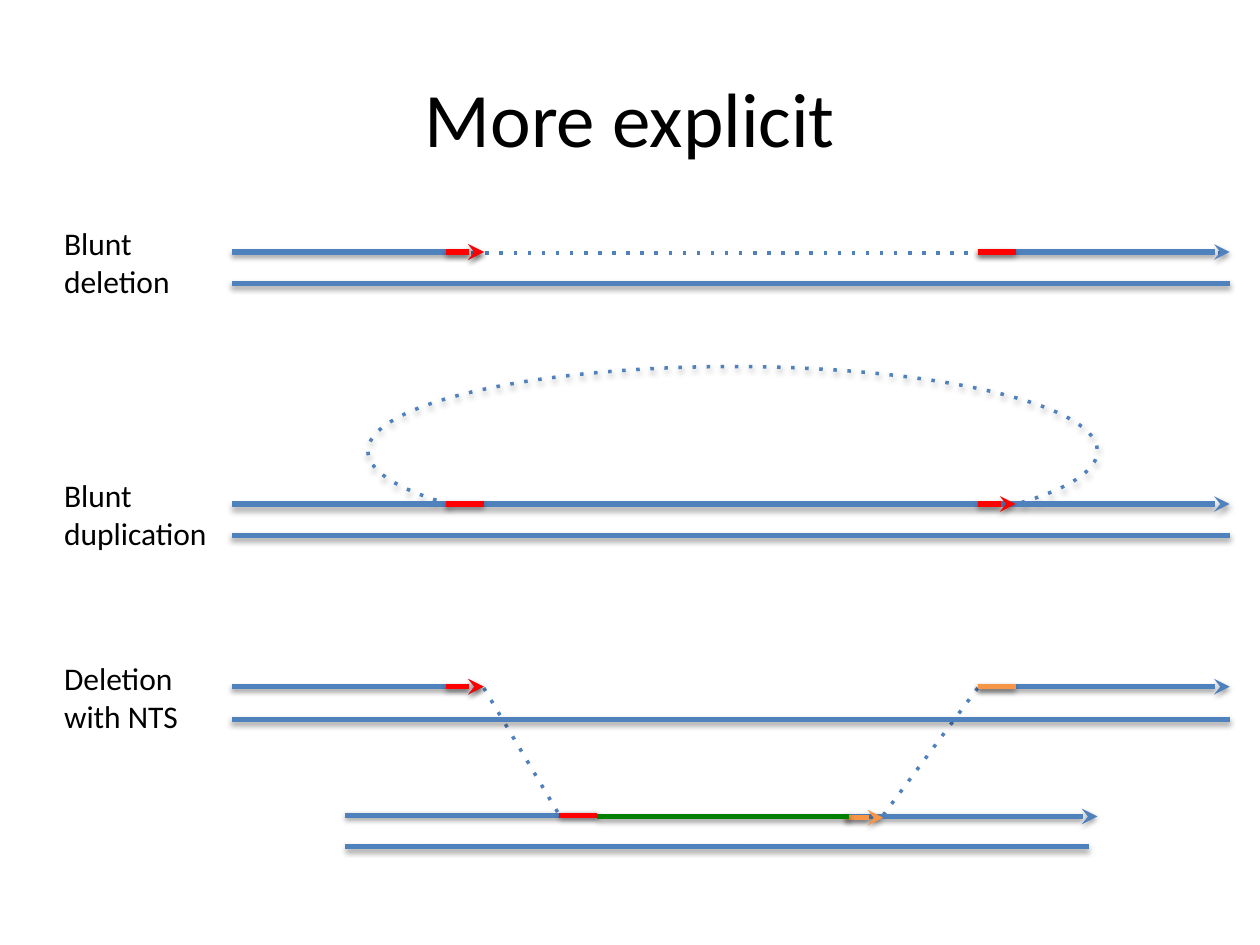
"""Build the slide that compares blunt deletion, blunt duplication and deletion with NTS."""
import lxml.etree
import pptx
import pptx.dml.color
import pptx.enum.shapes
import pptx.enum.text
import pptx.oxml.ns
import pptx.util

Inches = pptx.util.Inches
Pt = pptx.util.Pt
qn = pptx.oxml.ns.qn
add = lxml.etree.SubElement
HUES = {"blue": "4F81BD", "red": "FF0000", "orange": "F79646", "green": "008000", "black": "000000"}

deck = pptx.Presentation()
deck.slide_width, deck.slide_height = Inches(10), Inches(7.5)
slide = deck.slides.add_slide(deck.slide_layouts[6])


def style(shape, hue, dots=False, arrow=False, shade=True):
    """Set the line, dots, arrowhead and shadow of a shape."""
    shape.line.color.rgb = pptx.dml.color.RGBColor.from_string(HUES[hue])
    shape.line.width = Pt(2 if dots else 3)
    props = shape.element.find(qn("p:spPr"))
    line = props.find(qn("a:ln"))
    if dots:
        add(line, qn("a:prstDash"), val="dot")
    if arrow:
        add(line, qn("a:tailEnd"), type="stealth")
    effects = add(props, qn("a:effectLst"))
    if shade:
        cast = add(effects, qn("a:outerShdw"), blurRad=str(Pt(3.1)), dist=str(Pt(1.6)),
                   dir="5400000", rotWithShape="0")
        tint = add(cast, qn("a:srgbClr"), val=HUES["black"])
        add(tint, qn("a:alpha"), val="38000")


def write(box, lines, size, align, wrap):
    """Put lines of text at left, top, width and height."""
    shape = slide.shapes.add_textbox(*map(Inches, box))
    frame = shape.text_frame
    frame.word_wrap = wrap
    if wrap:
        frame.vertical_anchor = pptx.enum.text.MSO_ANCHOR.MIDDLE
    else:
        frame.auto_size = pptx.enum.text.MSO_AUTO_SIZE.SHAPE_TO_FIT_TEXT
    for i, words in enumerate(lines):
        para = frame.add_paragraph() if i else frame.paragraphs[0]
        para.alignment = align
        run = para.add_run()
        run.text = words
        run.font.name, run.font.size = "Calibri", Pt(size)
        run.font.color.rgb = pptx.dml.color.RGBColor.from_string(HUES["black"])


loop = slide.shapes.add_shape(pptx.enum.shapes.MSO_SHAPE.ARC, *map(Inches, (2.92, 2.91, 5.79, 1.34)))
loop.adjustments[0], loop.adjustments[1] = 101.586, 6.198
loop.fill.background()
style(loop, "blue", dots=True)

ALIGN = pptx.enum.text.PP_ALIGN
write((0.5, 0.3, 9, 1.25), ["More explicit"], 44, ALIGN.CENTER, True)
labels = [
    (1.73, 1.05, ["Blunt", "deletion"]),
    (3.73, 1.35, ["Blunt", "duplication"]),
    (5.18, 1.12, ["Deletion", "with NTS"]),
]
for top, width, lines in labels:
    write((0.41, top, width, 0.71), lines, 18, ALIGN.LEFT, False)

links = [(1.84, 2.01, 9.76, 2.01), (7.01, 6.47, 7.76, 5.46), (3.84, 5.46, 4.44, 6.47)]
strands = [
    (1.84, 9.76, 2.25, "blue", False),
    (1.84, 3.84, 2, "blue", True),
    (7.76, 9.76, 2, "blue", True),
    (3.54, 3.84, 2, "red", True),
    (7.76, 8.06, 2, "red", False),
    (1.84, 9.76, 4.25, "blue", False),
    (1.84, 9.76, 4, "blue", True),
    (7.76, 8.06, 4, "red", True),
    (3.54, 3.84, 4, "red", False),
    (1.84, 9.76, 5.71, "blue", False),
    (1.84, 3.84, 5.45, "blue", True),
    (7.76, 9.76, 5.45, "blue", True),
    (3.54, 3.84, 5.45, "red", True),
    (7.76, 8.06, 5.45, "orange", False),
    (2.74, 8.64, 6.72, "blue", False),
    (2.74, 4.74, 6.47, "blue", False),
    (6.71, 8.71, 6.48, "blue", True),
    (4.44, 4.74, 6.47, "red", False),
    (6.71, 7.01, 6.49, "orange", True),
    (4.74, 6.74, 6.48, "green", False),
]
STRAIGHT = pptx.enum.shapes.MSO_CONNECTOR.STRAIGHT
for ends in links:
    link = slide.shapes.add_connector(STRAIGHT, *map(Inches, ends))
    style(link, "blue", dots=True, shade=False)
for start, end, y, hue, arrow in strands:
    strand = slide.shapes.add_connector(STRAIGHT, *map(Inches, (start, y, end, y)))
    style(strand, hue, arrow=arrow)

deck.save("out.pptx")
